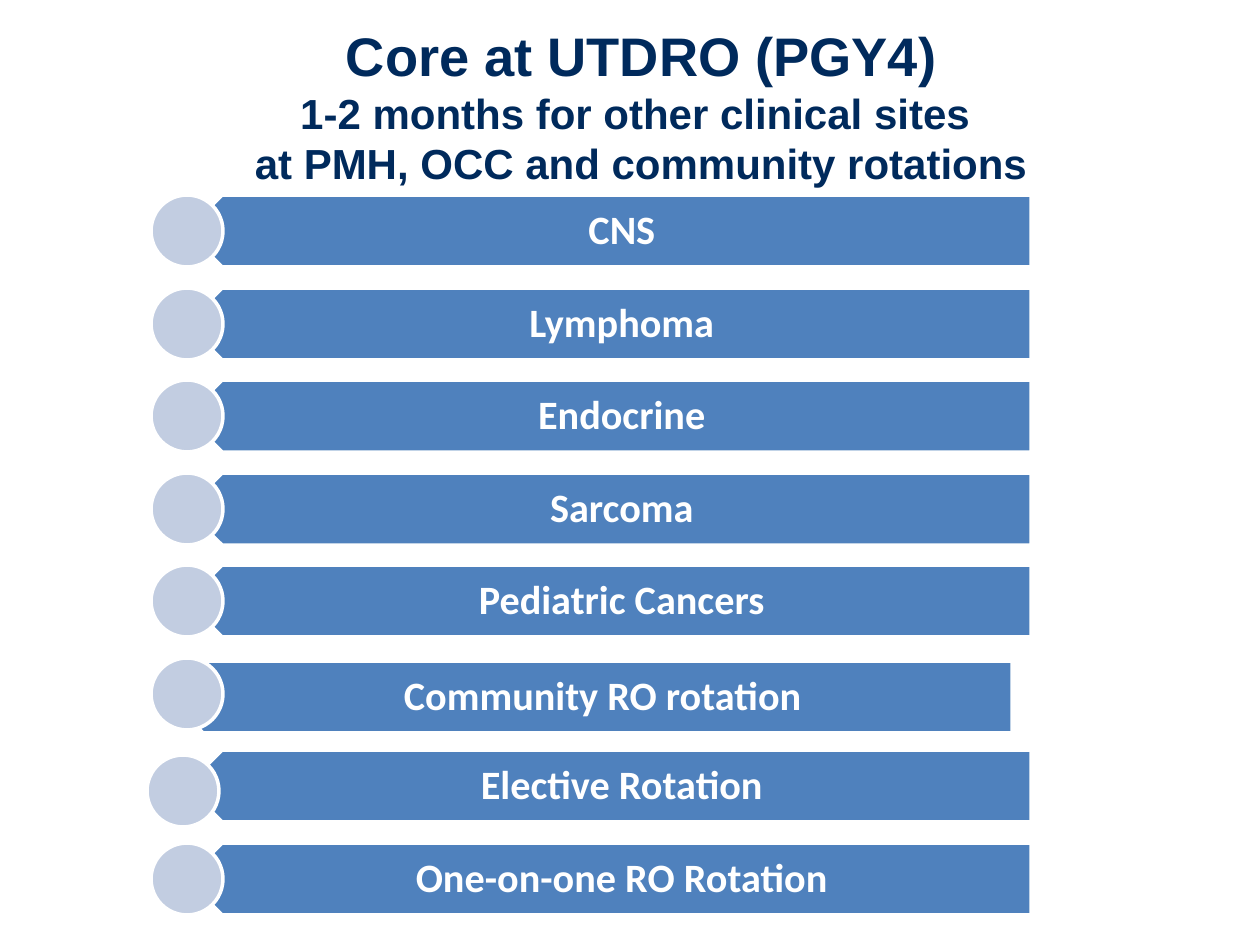
"""Build the PGY4 core rotations slide: a title over a column of tagged bars."""
from copy import deepcopy
from dataclasses import dataclass

from pptx import Presentation
from pptx.dml.color import RGBColor
from pptx.enum.shapes import MSO_SHAPE as Preset
from pptx.enum.text import MSO_ANCHOR as Anchor, MSO_AUTO_SIZE as AutoSize, PP_ALIGN as Align
from pptx.util import Emu, Pt

EMU_PER_PX = 914400 / 126
COLORS = {"navy": "002A5C", "bar": "4F81BD", "marker": "C2CDE1", "white": "FFFFFF"}
FIRST_TOP, LAST_TOP = 195, 843
BAR_LEFT, BAR_WIDTH, ROW_HEIGHT = 186, 845, 72
LABEL_INDENT = 18
MARKER_LEFT = 151


@dataclass(frozen=True)
class Rotation:
    name: str
    bar_dx: int = 0
    bar_dy: int = 0
    marker_dx: int = 0
    marker_dy: int = 0


ROTATIONS = [
    Rotation("CNS"),
    Rotation("Lymphoma"),
    Rotation("Endocrine"),
    Rotation("Sarcoma"),
    Rotation("Pediatric Cancers"),
    Rotation("Community RO rotation", bar_dx=-19, bar_dy=3),
    Rotation("Elective Rotation", marker_dx=-4, marker_dy=5),
    Rotation("One-on-one RO Rotation"),
]


def px(length: int) -> Emu:
    return Emu(round(length * EMU_PER_PX))


def rgb(color: str) -> RGBColor:
    return RGBColor.from_string(COLORS[color])


def write(paragraph, text: str, *, size: int, font: str, color: str) -> None:
    paragraph.alignment = Align.CENTER
    for index, line in enumerate(text.split("\n")):
        if index:
            paragraph.add_line_break()
            paragraph._p[-1].append(deepcopy(run._r.rPr))
        run = paragraph.add_run()
        run.text = line
        run.font.size = Pt(size)
        run.font.name = font
        run.font.bold = True
        run.font.color.rgb = rgb(color)


def set_frame(frame, left: int = 0, top: int = 0, right: int = 0, bottom: int = 0) -> None:
    frame.word_wrap = True
    frame.auto_size = AutoSize.NONE
    frame.vertical_anchor = Anchor.MIDDLE
    frame.margin_left, frame.margin_top = px(left), px(top)
    frame.margin_right, frame.margin_bottom = px(right), px(bottom)


def add_outlined(slide, preset: Preset, left: int, top: int, width: int, fill: str):
    shape = slide.shapes.add_shape(preset, px(left), px(top), px(width), px(ROW_HEIGHT))
    shape.shadow.inherit = False
    shape.fill.solid()
    shape.fill.fore_color.rgb = rgb(fill)
    shape.line.color.rgb = rgb("white")
    shape.line.width = Pt(2)
    return shape


def add_title(slide) -> None:
    title = slide.shapes.title
    title.left, title.top, title.width, title.height = px(53), px(21), px(1176), px(168)
    set_frame(title.text_frame)
    heading = title.text_frame.paragraphs[0]
    write(heading, "Core at UTDRO (PGY4)\n", size=31, font="Arial", color="navy")
    write(heading, "1-2 months for other clinical sites \nat PMH, OCC and community rotations",
          size=24, font="Arial", color="navy")


def add_rotation(slide, rotation: Rotation, top: int) -> None:
    bar_left, bar_top = BAR_LEFT + rotation.bar_dx, top + rotation.bar_dy
    bar = add_outlined(slide, Preset.PENTAGON, bar_left, bar_top, BAR_WIDTH, "bar")
    bar.rotation = 180
    label = slide.shapes.add_textbox(px(bar_left + LABEL_INDENT), px(bar_top),
                                     px(BAR_WIDTH - LABEL_INDENT), px(ROW_HEIGHT))
    set_frame(label.text_frame, left=32, top=12, right=23, bottom=12)
    name = label.text_frame.paragraphs[0]
    name.line_spacing = 0.9
    write(name, rotation.name, size=23, font="Calibri", color="white")
    add_outlined(slide, Preset.OVAL, MARKER_LEFT + rotation.marker_dx,
                 top + rotation.marker_dy, ROW_HEIGHT, "marker")


def main() -> None:
    deck = Presentation()
    deck.slide_width, deck.slide_height = px(1260), px(945)
    slide = deck.slides.add_slide(deck.slide_layouts[5])
    add_title(slide)
    pitch = (LAST_TOP - FIRST_TOP) / (len(ROTATIONS) - 1)
    for row, rotation in enumerate(ROTATIONS):
        add_rotation(slide, rotation, round(FIRST_TOP + row * pitch))
    deck.save("out.pptx")


if __name__ == "__main__":
    main()
